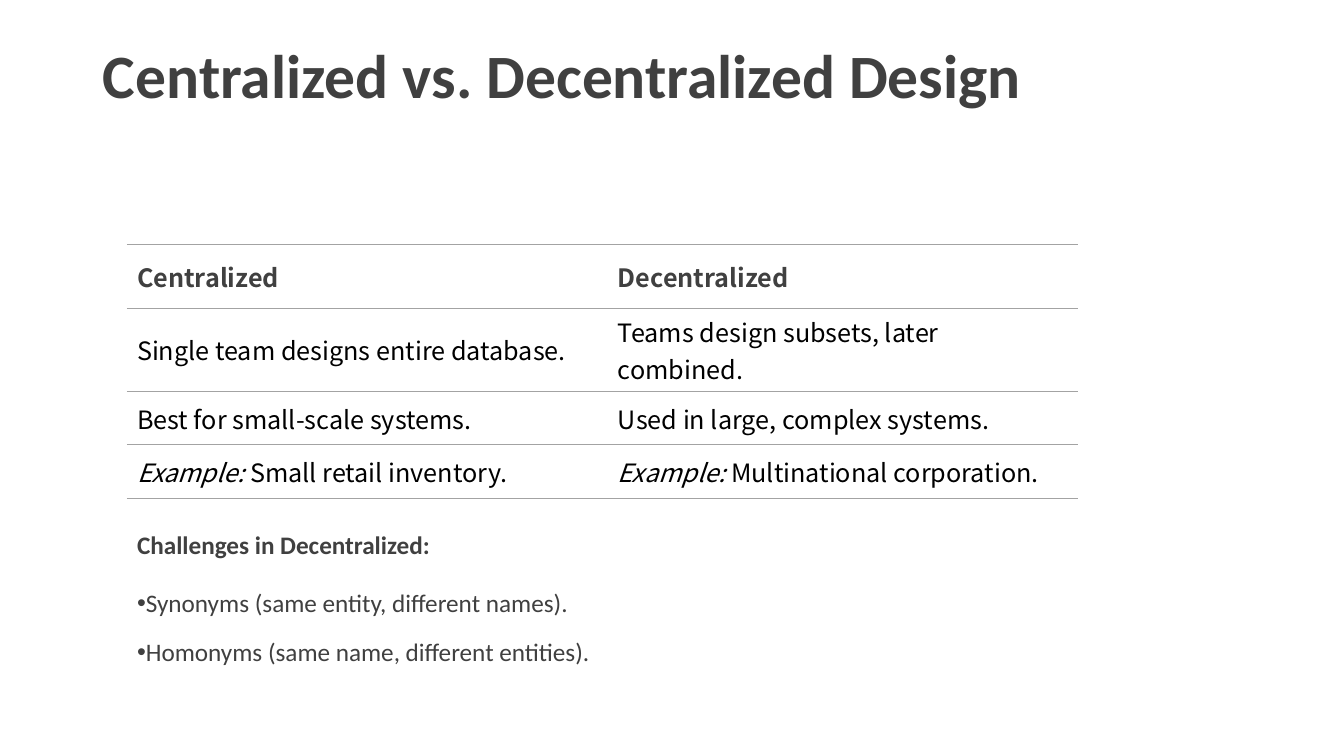
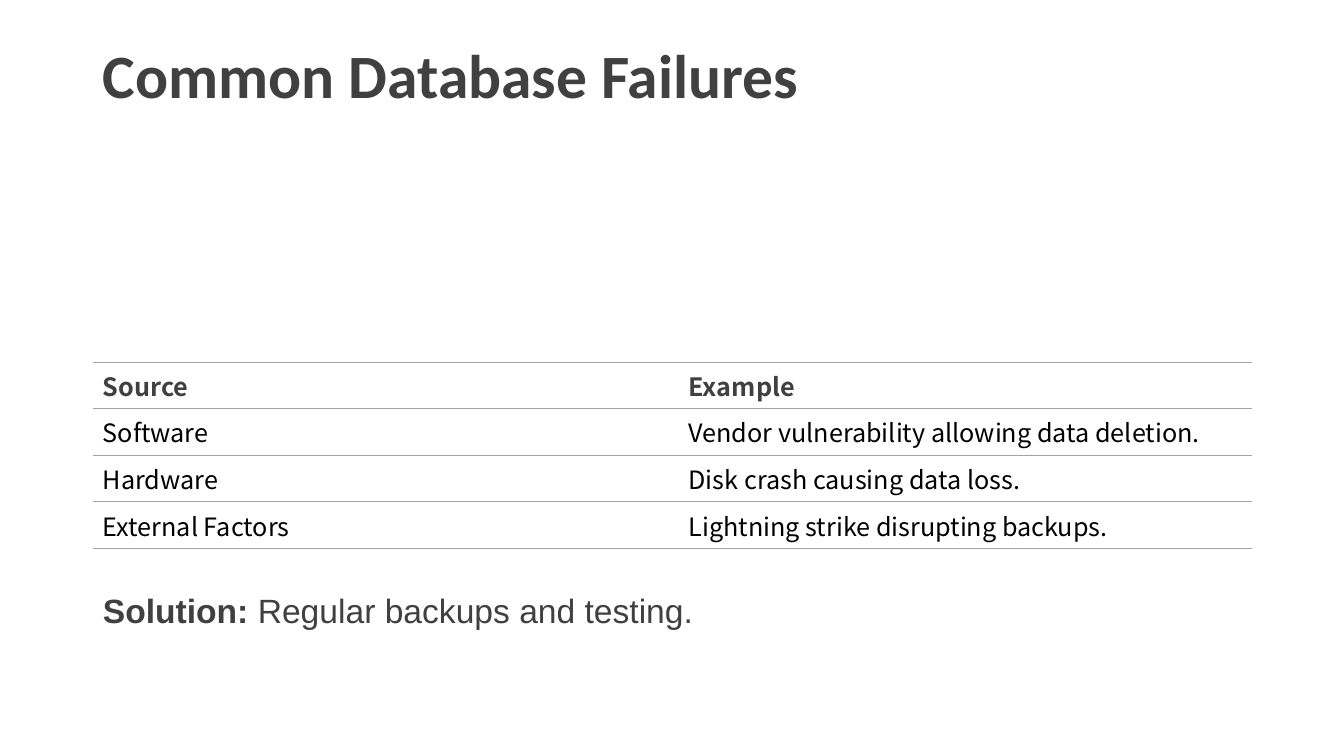
import pptx
import pptx.dml.color
import pptx.enum.text
import pptx.oxml
import pptx.oxml.ns
import pptx.util

Cm = pptx.util.Cm
Pt = pptx.util.Pt
ANCHOR = pptx.enum.text.MSO_ANCHOR

# Shared style
DARK, BLACK, RULE = "404040", "000000", "A3A3A3"
TITLE_FONT, TABLE_FONT, NOTE_FONT = "Calibri", "Noto Sans CJK SC", "Arial"
TITLE_BOX = (2.34, 1.02, 29.21, 3.68)
PLAIN_TABLE = "{2D5ABB26-0587-4C30-8999-92F81FD0307C}"


def color(value):
    return pptx.dml.color.RGBColor.from_string(value)


def write(para, text, font=TITLE_FONT, size=18, fill=DARK, bold=False, italic=False):
    """Add one formatted span to a paragraph."""
    span = para.add_run()
    span.text = text
    span.font.name = font
    span.font.size = Pt(size)
    span.font.color.rgb = color(fill)
    span.font.bold = bold
    span.font.italic = italic


def place(shape, box, anchor):
    """Move a placeholder to its box, given in centimetres."""
    shape.left, shape.top, shape.width, shape.height = map(Cm, box)
    shape.text_frame.word_wrap = True
    shape.text_frame.auto_size = pptx.enum.text.MSO_AUTO_SIZE.NONE
    shape.text_frame.vertical_anchor = anchor
    return shape.text_frame


def format_para(para, before=0, after=0, line=1.0, bullet=False):
    para.alignment = pptx.enum.text.PP_ALIGN.LEFT
    para.space_before, para.space_after = Pt(before), Pt(after)
    para.line_spacing = line
    props = para._p.get_or_add_pPr()
    props.set("marL", "0")
    props.set("indent", "0")
    mark = '<a:buChar %s char="•"/>' if bullet else "<a:buNone %s/>"
    props.append(pptx.oxml.parse_xml(mark % pptx.oxml.ns.nsdecls("a")))


def open_page(deck, title):
    """Add a page with the shared title."""
    page = deck.slides.add_slide(deck.slide_layouts[1])
    para = place(page.shapes.title, TITLE_BOX, ANCHOR.TOP).paragraphs[0]
    format_para(para, line=0.9)
    write(para, title, size=44, bold=True)
    return page


def rule_cell(cell):
    """Draw thin rules above and below a cell, none at its sides."""
    props = cell._tc.get_or_add_tcPr()
    solid = f'<a:solidFill><a:srgbClr val="{RULE}"/></a:solidFill>'
    for side in "LRTB":
        paint = solid if side in "TB" else "<a:noFill/>"
        props.append(pptx.oxml.parse_xml(
            f'<a:ln{side} {pptx.oxml.ns.nsdecls("a")} w="4200">{paint}</a:ln{side}>'))
    cell.fill.background()


def add_ruled_table(page, left, top, widths, heights, rows):
    """Place a table with a bold head; a cell is text or an (italic, plain) pair."""
    frame = page.shapes.add_table(len(rows), len(widths), Cm(left), Cm(top),
                                  Cm(sum(widths)), Cm(sum(heights)))
    table = frame.table
    table.first_row = table.horz_banding = False
    table._tbl.tblPr.find(pptx.oxml.ns.qn("a:tableStyleId")).text = PLAIN_TABLE
    for column, width in zip(table.columns, widths):
        column.width = Cm(width)
    for index, (height, texts) in enumerate(zip(heights, rows)):
        table.rows[index].height = Cm(height)
        head = index == 0
        for cell, text in zip(table.rows[index].cells, texts):
            rule_cell(cell)
            cell.vertical_anchor = ANCHOR.MIDDLE
            lead, plain = text if isinstance(text, tuple) else ("", text)
            para = cell.text_frame.paragraphs[0]
            if lead:
                write(para, lead, font=TABLE_FONT, fill=BLACK, italic=True)
            write(para, plain, font=TABLE_FONT, fill=DARK if head else BLACK, bold=head)


def add_challenges(page, box, heading, items):
    """Fill the body with a bold heading and a bulleted list."""
    frame = place(page.placeholders[1], box, ANCHOR.TOP)
    for index, text in enumerate([heading] + items):
        para = frame.add_paragraph() if index else frame.paragraphs[0]
        format_para(para, before=3 if index > 1 else 10.3, after=10.3,
                    line=Pt(21.4), bullet=index > 0)
        write(para, text, bold=index == 0)


def add_solution(page, box, label, text):
    """Fill the body with one labelled line."""
    para = place(page.placeholders[1], box, ANCHOR.MIDDLE).paragraphs[0]
    format_para(para)
    write(para, label, font=NOTE_FONT, size=24, bold=True)
    write(para, text, font=NOTE_FONT, size=24)


def build_design_page(deck):
    page = open_page(deck, "Centralized vs. Decentralized Design")
    add_ruled_table(page, 3.2, 6.15, [12.12, 11.84], [1.62] + [1.34] * 3, [
        ("Centralized", "Decentralized"),
        ("Single team designs entire database.", "Teams design subsets, later combined."),
        ("Best for small-scale systems.", "Used in large, complex systems."),
        (("Example:", " Small retail inventory."), ("Example:", " Multinational corporation.")),
    ])
    add_challenges(page, (3.2, 13.21, 16.94, 3.68), "Challenges in Decentralized:", [
        "Synonyms (same entity, different names).",
        "Homonyms (same name, different entities).",
    ])


def build_failures_page(deck):
    page = open_page(deck, "Common Database Failures")
    add_ruled_table(page, 2.34, 9.12, [14.76, 14.45], [1.16] * 4, [
        ("Source", "Example"),
        ("Software", "Vendor vulnerability allowing data deletion."),
        ("Hardware", "Disk crash causing data loss."),
        ("External Factors", "Lightning strike disrupting backups."),
    ])
    add_solution(page, (2.34, 14.73, 15.52, 1.27), "Solution:", " Regular backups and testing.")


def main():
    deck = pptx.Presentation()
    deck.slide_width, deck.slide_height = Cm(33.87), Cm(19.05)
    build_design_page(deck)
    build_failures_page(deck)
    deck.save("out.pptx")


if __name__ == "__main__":
    main()
